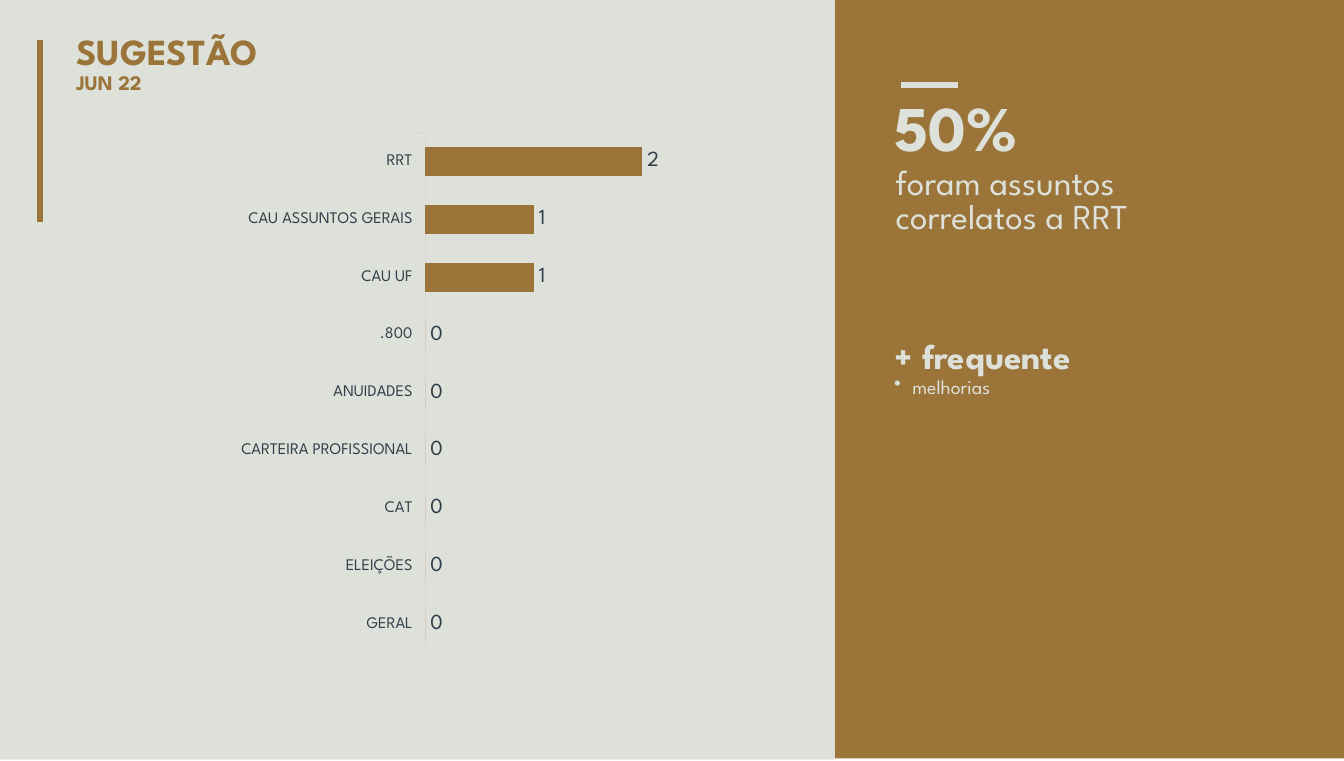
from lxml import etree
from pptx import Presentation
from pptx.chart.data import CategoryChartData
from pptx.dml.color import RGBColor
from pptx.enum.chart import XL_CHART_TYPE as ChartType
from pptx.enum.chart import XL_LABEL_POSITION as LabelPosition
from pptx.enum.chart import XL_TICK_MARK as TickMark
from pptx.enum.shapes import MSO_CONNECTOR as Connector
from pptx.enum.shapes import MSO_SHAPE as Shape
from pptx.oxml import parse_xml
from pptx.oxml.ns import nsdecls, qn
from pptx.util import Inches, Pt

FONT = "League Spartan"
COLORS = {"paper": "DDE1DA", "bronze": "9A7439", "ink": "2E3D46", "axis": "D9D9D9"}

SUBJECTS = [
    ("RRT", 2),
    ("CAU ASSUNTOS GERAIS", 1),
    ("CAU UF", 1),
    (".800", 0),
    ("ANUIDADES", 0),
    ("CARTEIRA PROFISSIONAL", 0),
    ("CAT", 0),
    ("ELEIÇÕES", 0),
    ("GERAL", 0),
]

# left, top, width, height, fill
PANELS = [(0, 0, 6.46, 5.88, "paper"), (6.46, 0, 3.94, 5.87, "bronze")]
# start x, start y, end x, end y, colour
ACCENTS = [(0.31, 0.31, 0.31, 1.72, "bronze"), (6.97, 0.66, 7.41, 0.66, "paper")]

# box, top inset, colour, then paragraphs:
# text, size, bold, line spacing, space before, left margin, bulleted
TEXTS = [
    ((0.55, 0.22, 5.82, 0.75), 0.02, "bronze", [
        ("SUGESTÃO", 20.5, True, 23.1, 1.1, 0.04, False),
        ("JUN 22", 11.5, True, 12.3, 0, 0.04, False),
    ]),
    ((6.91, 0.69, 2.11, 1.16), 0.02, "paper", [
        ("50%", 35.5, True, 40.6, 1.1, 0.01, False),
        ("foram assuntos correlatos a RRT", 19.5, False, 18.9, 2.5, 0.02, False),
    ]),
    ((6.91, 2.59, 1.53, 0.51), 0.01, "paper", [
        ("+ frequente", 19.5, True, 22.4, 0.9, 0.01, False),
        ("melhorias", 11, False, 12.2, 0, 0.15, True),
    ]),
]

CHART_BOX = (1.4, 0.9, 4.8, 4.3)
PLOT_BOX = (3.29, 1.03, 2.52, 4.03)
AXIS_MAXIMUM = 3


def color(name):
    return RGBColor.from_string(COLORS[name])


def style_font(font, size, color_name, bold=False):
    font.name = FONT
    font.size = Pt(size)
    font.bold = bold
    font.color.rgb = color(color_name)


def add_panel(slide, left, top, width, height, fill):
    panel = slide.shapes.add_shape(
        Shape.RECTANGLE, Inches(left), Inches(top), Inches(width), Inches(height))
    panel.shadow.inherit = False
    panel.fill.solid()
    panel.fill.fore_color.rgb = color(fill)
    panel.line.fill.background()


def add_accent(slide, start_x, start_y, end_x, end_y, color_name):
    accent = slide.shapes.add_connector(
        Connector.STRAIGHT, Inches(start_x), Inches(start_y), Inches(end_x), Inches(end_y))
    accent.line.color.rgb = color(color_name)
    accent.line.width = Pt(3.6)
    etree.SubElement(accent.element.spPr, qn("a:effectLst"))


def add_text(slide, box, top_inset, color_name, paragraphs):
    frame = slide.shapes.add_textbox(*map(Inches, box)).text_frame
    frame.word_wrap = True
    frame.margin_left = frame.margin_right = frame.margin_bottom = 0
    frame.margin_top = Inches(top_inset)
    frame.text = "\n".join(item[0] for item in paragraphs)
    for paragraph, item in zip(frame.paragraphs, paragraphs):
        _, size, bold, spacing, before, margin, bulleted = item
        paragraph.line_spacing = Pt(spacing)
        paragraph.space_before = Pt(before)
        style_font(paragraph.runs[0].font, size, color_name, bold)
        properties = paragraph._p.get_or_add_pPr()
        properties.set("marL", str(Inches(margin)))
        if bulleted:
            properties.set("indent", str(Inches(-0.14)))
            etree.SubElement(properties, qn("a:buChar")).set("char", "•")


def place_plot(chart):
    """Pin the inner plot area to PLOT_BOX, as fractions of the chart frame."""
    left, top, width, height = CHART_BOX
    plot_left, plot_top, plot_width, plot_height = PLOT_BOX
    fractions = {
        "x": (plot_left - left) / width,
        "y": (plot_top - top) / height,
        "w": plot_width / width,
        "h": plot_height / height,
    }
    sizes = "".join(f'<c:{key} val="{value:.4f}"/>' for key, value in fractions.items())
    layout = parse_xml(
        f'<c:layout {nsdecls("c")}><c:manualLayout><c:layoutTarget val="inner"/>'
        f'<c:xMode val="edge"/><c:yMode val="edge"/>{sizes}</c:manualLayout></c:layout>')
    plot_area = chart._chartSpace.chart.plotArea
    for old_layout in plot_area.findall(qn("c:layout")):
        plot_area.remove(old_layout)
    plot_area.insert(0, layout)


def add_subject_chart(slide):
    data = CategoryChartData(number_format="0")
    data.categories = [name for name, _ in SUBJECTS]
    data.add_series("Sugestão", [count for _, count in SUBJECTS])
    chart = slide.shapes.add_chart(
        ChartType.BAR_CLUSTERED, *map(Inches, CHART_BOX), data).chart
    chart.has_legend = False
    chart.has_title = False
    style_font(chart.font, 9, "ink")

    category_axis = chart.category_axis
    category_axis.reverse_order = True
    category_axis.major_tick_mark = TickMark.OUTSIDE
    category_axis.format.line.color.rgb = color("axis")
    category_axis.format.line.width = Pt(0.6)
    style_font(category_axis.tick_labels.font, 9, "ink")

    value_axis = chart.value_axis
    value_axis.minimum_scale = 0
    value_axis.maximum_scale = AXIS_MAXIMUM
    value_axis.has_major_gridlines = False
    value_axis.visible = False

    plot = chart.plots[0]
    plot.gap_width = 100
    plot.vary_by_categories = False
    bars = plot.series[0].format
    bars.fill.solid()
    bars.fill.fore_color.rgb = color("bronze")
    plot.has_data_labels = True
    labels = plot.data_labels
    labels.show_value = True
    labels.position = LabelPosition.OUTSIDE_END
    style_font(labels.font, 12, "ink")
    place_plot(chart)


def main():
    presentation = Presentation()
    presentation.slide_width = Inches(10.4)
    presentation.slide_height = Inches(5.89)
    slide = presentation.slides.add_slide(presentation.slide_layouts[6])
    for panel in PANELS:
        add_panel(slide, *panel)
    for accent in ACCENTS:
        add_accent(slide, *accent)
    add_subject_chart(slide)
    for text in TEXTS:
        add_text(slide, *text)
    presentation.save("out.pptx")


if __name__ == "__main__":
    main()
